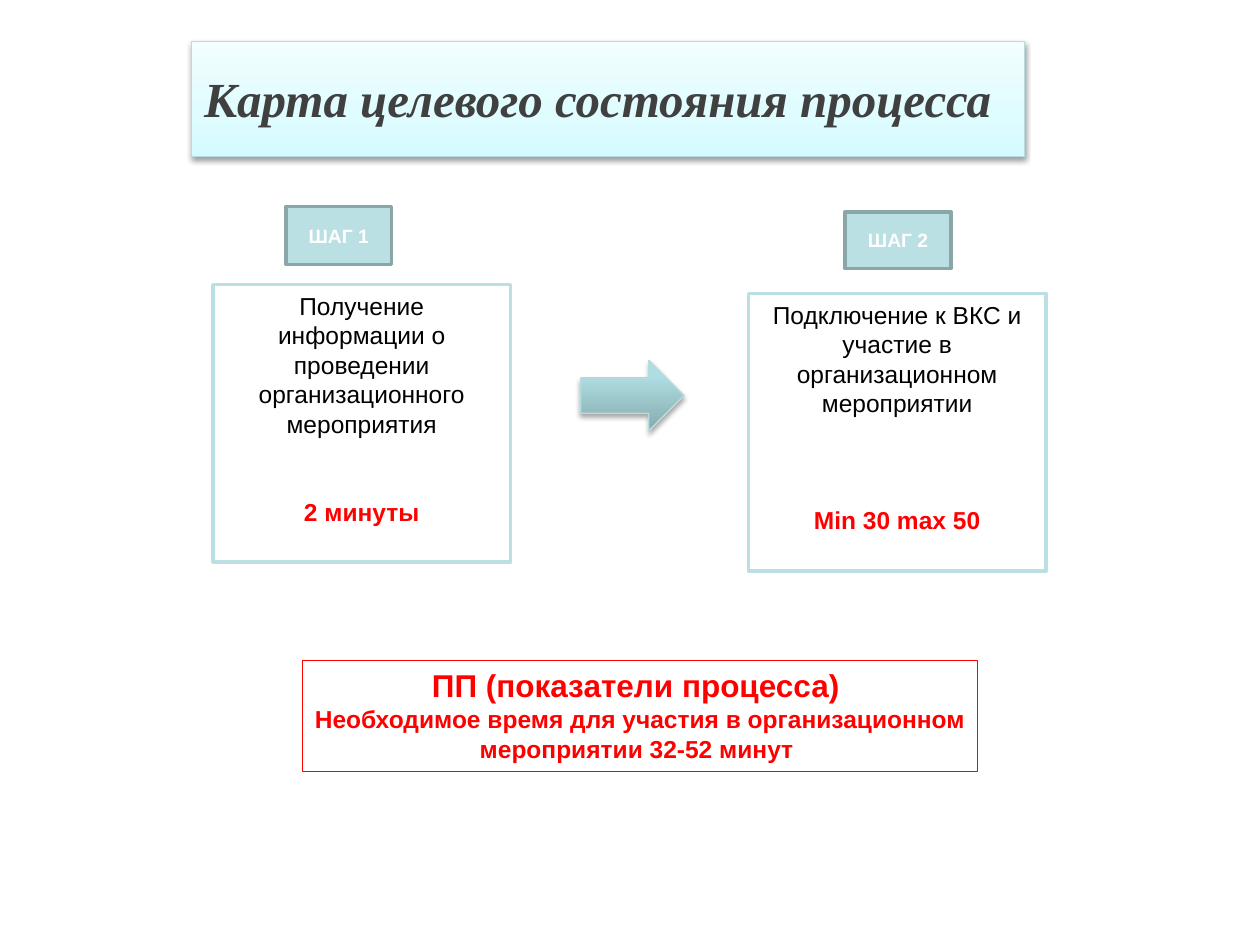
from dataclasses import dataclass

import lxml.etree
import pptx
import pptx.dml.color
import pptx.enum.shapes
import pptx.enum.text
import pptx.oxml.ns
import pptx.util

Pt = pptx.util.Pt
RGBColor = pptx.dml.color.RGBColor
Shapes = pptx.enum.shapes.MSO_SHAPE
Anchor = pptx.enum.text.MSO_ANCHOR
Align = pptx.enum.text.PP_ALIGN
qn = pptx.oxml.ns.qn

WHITE = RGBColor(0xFF, 0xFF, 0xFF)
BLACK = RGBColor(0x00, 0x00, 0x00)
RED = RGBColor(0xFF, 0x00, 0x00)
CHARCOAL = RGBColor(0x40, 0x40, 0x40)
AQUA = RGBColor(0xBB, 0xE0, 0xE3)
AQUA_DARK = RGBColor(0x8A, 0xA6, 0xA8)
AQUA_EDGE = RGBColor(0xB6, 0xDC, 0xDF)
TITLE_STOPS = (
    (0, RGBColor(0xD3, 0xFB, 0xFF)),
    (35, RGBColor(0xDF, 0xFC, 0xFF)),
    (100, RGBColor(0xF2, 0xFE, 0xFF)),
)
ARROW_STOPS = (
    (0, RGBColor(0x87, 0xAB, 0xAE)),
    (80, RGBColor(0xAF, 0xDE, 0xE2)),
    (100, RGBColor(0xAF, 0xE0, 0xE4)),
)


@dataclass(frozen=True)
class Frame:
    left: float
    top: float
    width: float
    height: float

    def lengths(self):
        return [Pt(v) for v in (self.left, self.top, self.width, self.height)]


@dataclass(frozen=True)
class Step:
    label: str
    action: str
    duration: str
    duration_gap: float
    label_frame: Frame
    card_frame: Frame


STEPS = (
    Step("ШАГ 1", "Получение информации о проведении организационного мероприятия",
         "2 минуты", 33.5,
         Frame(163.4, 118, 60.5, 33.1), Frame(121.7, 162.7, 170, 158.4)),
    Step("ШАГ 2", "Подключение к ВКС и участие в организационном мероприятии",
         "Min 30 max 50", 50.3,
         Frame(483, 121, 60.5, 32.4), Frame(427.7, 167.8, 170, 158.4)),
)


def add_box(slide, frame: Frame, kind=Shapes.RECTANGLE, *, fill=None,
            line=AQUA, line_width: float = 2, anchor=Anchor.TOP):
    """Add a shape without shadow; no fill colour leaves it see-through."""
    shape = slide.shapes.add_shape(kind, *frame.lengths())
    shape.shadow.inherit = False
    if fill is None:
        shape.fill.background()
    else:
        shape.fill.solid()
        shape.fill.fore_color.rgb = fill
    shape.line.color.rgb = line
    shape.line.width = Pt(line_width)
    shape.text_frame.word_wrap = True
    shape.text_frame.vertical_anchor = anchor
    return shape


def write(shape, text: str, *, size: float, color=BLACK, font: str = "Arial",
          bold: bool = False, italic: bool = False, align=Align.CENTER,
          space_before: float = 0) -> None:
    """Fill the first paragraph of the shape, or add one below existing text."""
    text_frame = shape.text_frame
    paragraph = text_frame.add_paragraph() if text_frame.text else text_frame.paragraphs[0]
    paragraph.alignment = align
    if space_before:
        paragraph.space_before = Pt(space_before)
    run = paragraph.add_run()
    run.text = text
    run.font.name = font
    run.font.size = Pt(size)
    run.font.bold = bold
    run.font.italic = italic
    run.font.color.rgb = color


def add_color(parent, color: RGBColor):
    return lxml.etree.SubElement(parent, qn("a:srgbClr"), val=str(color))


def set_vertical_gradient(shape, stops) -> None:
    """Run the stops, given as percent and colour, from bottom to top."""
    shape.fill.gradient()
    shape.fill.gradient_angle = 90
    stop_list = shape.element.spPr.find(".//" + qn("a:gsLst"))
    for stop in list(stop_list):
        stop_list.remove(stop)
    for percent, color in stops:
        stop = lxml.etree.SubElement(stop_list, qn("a:gs"), pos=str(percent * 1000))
        add_color(stop, color)


def set_drop_shadow(shape, *, distance: float, opacity: int) -> None:
    shape.shadow.inherit = False
    effects = shape.element.spPr.find(qn("a:effectLst"))
    shadow = lxml.etree.SubElement(
        effects, qn("a:outerShdw"), blurRad=str(Pt(3.1)), dist=str(Pt(distance)),
        dir="5400000", rotWithShape="0")
    color = add_color(shadow, BLACK)
    lxml.etree.SubElement(color, qn("a:alpha"), val=str(opacity * 1000))


def add_title(slide) -> None:
    title = slide.shapes.title
    title.left, title.top, title.width, title.height = Frame(109.4, 23.8, 476, 65.5).lengths()
    set_vertical_gradient(title, TITLE_STOPS)
    title.line.color.rgb = AQUA_EDGE
    title.line.width = Pt(0.75)
    set_drop_shadow(title, distance=1.6, opacity=38)
    text_frame = title.text_frame
    text_frame.auto_size = pptx.enum.text.MSO_AUTO_SIZE.NONE
    text_frame.word_wrap = True
    text_frame.vertical_anchor = Anchor.TOP
    text_frame.margin_top = Pt(15.5)
    write(title, "Карта целевого состояния процесса", size=28, color=CHARCOAL,
          font="Times New Roman", bold=True, italic=True, align=Align.LEFT)


def add_step(slide, step: Step) -> None:
    label = add_box(slide, step.label_frame, fill=AQUA, line=AQUA_DARK, anchor=Anchor.MIDDLE)
    write(label, step.label, size=11, color=WHITE, bold=True)
    card = add_box(slide, step.card_frame, fill=WHITE)
    write(card, step.action, size=14)
    write(card, step.duration, size=14, color=RED, bold=True,
          space_before=step.duration_gap)


def add_arrow(slide) -> None:
    arrow = add_box(slide, Frame(331.9, 205.9, 59, 40.3), Shapes.RIGHT_ARROW,
                    line=AQUA_EDGE, line_width=0.75)
    set_vertical_gradient(arrow, ARROW_STOPS)
    set_drop_shadow(arrow, distance=1.8, opacity=35)


def add_indicators(slide) -> None:
    box = add_box(slide, Frame(172.8, 377.3, 386, 63.4), line=RED, line_width=0.75)
    write(box, "ПП (показатели процесса) ", size=18, color=RED, bold=True)
    write(box, "Необходимое время для участия в организационном мероприятии 32-52 минут ",
          size=14, color=RED, bold=True)


def main() -> None:
    presentation = pptx.Presentation()
    presentation.slide_width, presentation.slide_height = Pt(720), Pt(540)
    title_only = presentation.slide_layouts.get_by_name("Title Only")
    slide = presentation.slides.add_slide(title_only)
    add_title(slide)
    for step in STEPS:
        add_step(slide, step)
    add_arrow(slide)
    add_indicators(slide)
    presentation.save("out.pptx")


if __name__ == "__main__":
    main()
